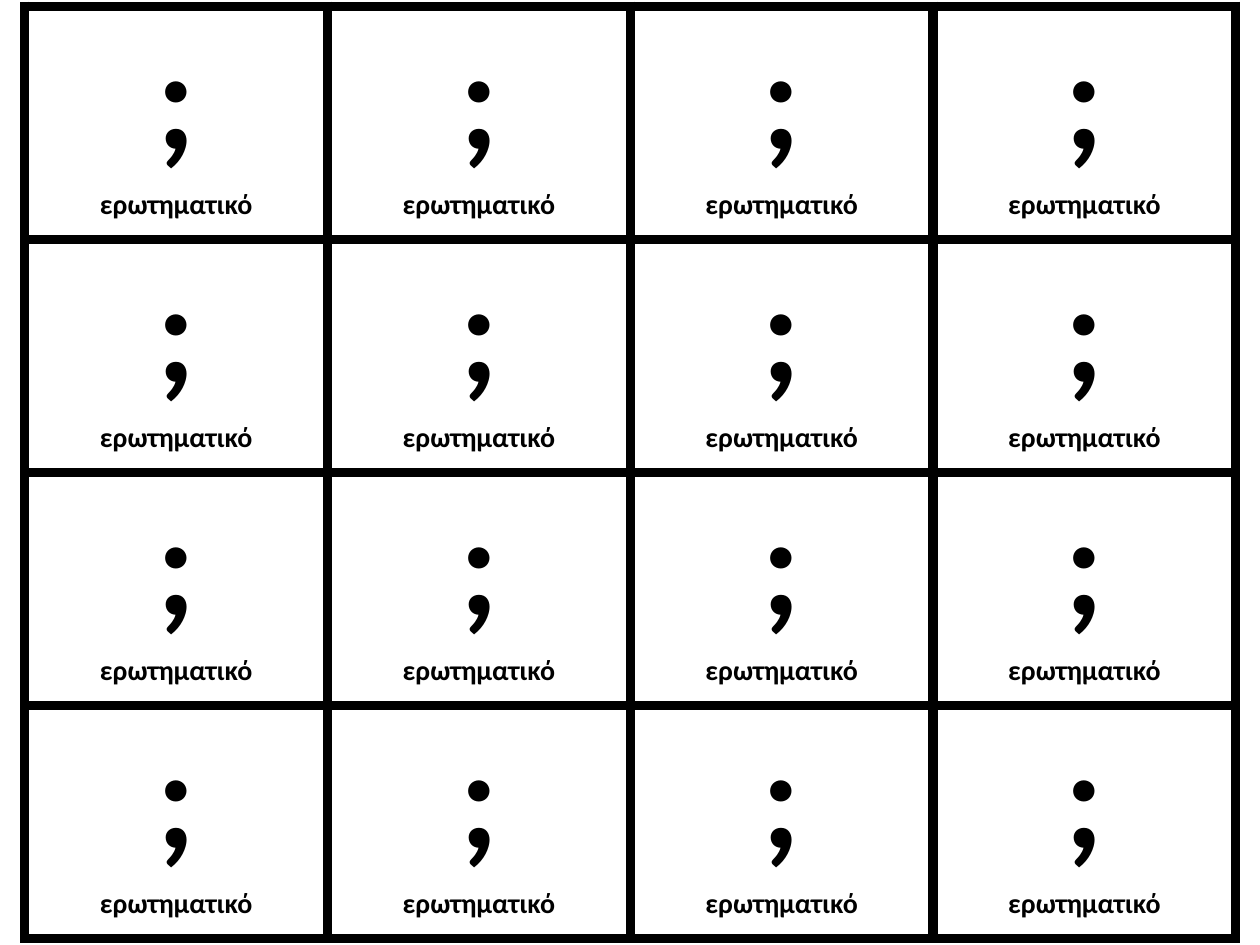
import pptx
import pptx.util
import pptx.dml.color
import pptx.enum.text
import pptx.oxml.ns
from lxml import etree

Pt = pptx.util.Pt
BLACK = pptx.dml.color.RGBColor(0, 0, 0)
FONT = "Calibri"
ROWS, COLS = 4, 4
MARK, LABEL = ";", "ερωτηματικό"


def write(para, text, size, bold=True, color=BLACK):
    para.alignment = pptx.enum.text.PP_ALIGN.CENTER
    run = para.add_run()
    run.text = text
    run.font.name = FONT
    run.font.size = Pt(size)
    run.font.bold = bold
    run.font.color.rgb = color


def frame(cell, width, color=BLACK):
    """Draw a solid border on all four sides of a cell."""
    qn = pptx.oxml.ns.qn
    props = cell._tc.get_or_add_tcPr()
    for side in ("a:lnL", "a:lnR", "a:lnT", "a:lnB"):
        line = etree.SubElement(props, qn(side), w=str(Pt(width)))
        fill = etree.SubElement(line, qn("a:solidFill"))
        etree.SubElement(fill, qn("a:srgbClr"), val=str(color))


def fill_card(cell):
    frame(cell, 6)
    cell.fill.background()
    write(cell.text_frame.paragraphs[0], MARK, 82)
    write(cell.text_frame.add_paragraph(), LABEL, 16)


def add_cards(slide, left, top, width, height):
    shape = slide.shapes.add_table(
        ROWS, COLS, Pt(left), Pt(top), Pt(width), Pt(height))
    table = shape.table
    table.first_row = False
    table.horz_banding = False
    for col in table.columns:
        col.width = Pt(width / COLS)
    for row in table.rows:
        row.height = Pt(height / ROWS)
    for cell in table.iter_cells():
        fill_card(cell)


def main():
    deck = pptx.Presentation()
    deck.slide_width, deck.slide_height = Pt(720), Pt(540)
    slide = deck.slides.add_slide(deck.slide_layouts[6])
    add_cards(slide, left=14.2, top=3.6, width=692, height=532.8)
    deck.save("out.pptx")


if __name__ == "__main__":
    main()
